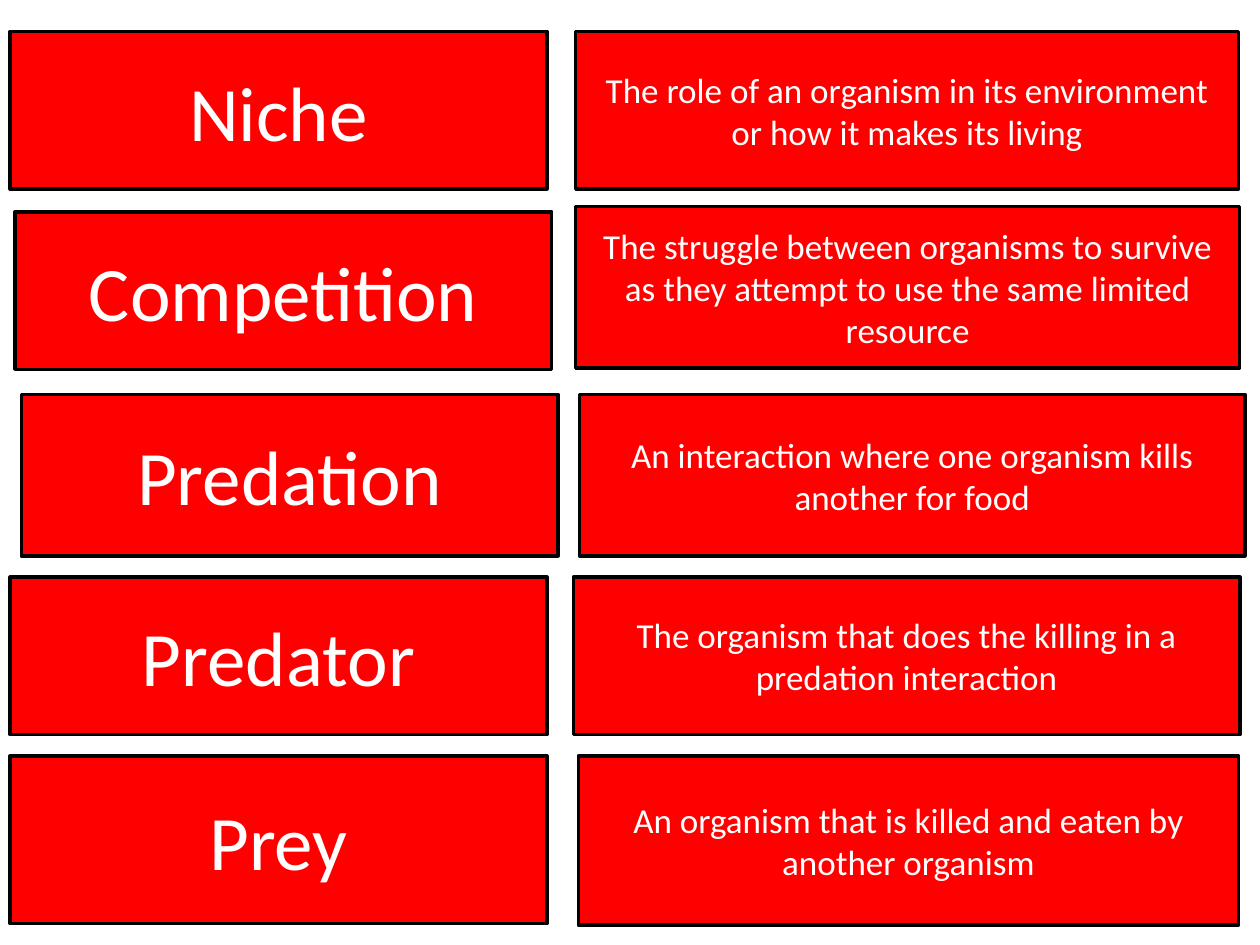
"""Build a slide of ecology terms paired with their definitions."""
from pptx import Presentation
from pptx.dml.color import RGBColor
from pptx.enum.shapes import MSO_SHAPE as Shape
from pptx.enum.text import MSO_ANCHOR as Anchor, PP_ALIGN as Align
from pptx.util import Pt

COLORS = {"card": "FF0000", "border": "000000", "text": "FFFFFF"}
FONT = "Calibri"
TERM_SIZE, DEFINITION_SIZE = 44, 20
TERM_WIDTH = 306.7

# Each box is (left, top, width, height); all terms share one width.
CARDS = [
    ("Niche", (5.8, 18, TERM_WIDTH, 90),
     "The role of an organism in its environment or how it makes its living",
     (329, 18, 378.7, 90)),
    ("Competition", (8.6, 121, TERM_WIDTH, 90),
     "The struggle between organisms to survive as they attempt to use the same limited resource",
     (329, 118.1, 379.4, 92.2)),
    ("Predation", (12.2, 225.4, TERM_WIDTH, 92.2),
     "An interaction where one organism kills another for food",
     (331.2, 225.4, 380.2, 92.2)),
    ("Predator", (5.8, 329.8, TERM_WIDTH, 90),
     "The organism that does the killing in a predation interaction",
     (327.6, 329.8, 380.9, 90)),
    ("Prey", (5.8, 432, TERM_WIDTH, 95.8),
     "An organism that is killed and eaten by another organism",
     (330.5, 432, 377.3, 96.5)),
]


def color(name):
    """Return the named colour."""
    return RGBColor.from_string(COLORS[name])


def add_card(slide, text, box, size):
    """Add a bordered box with centred text."""
    shape = slide.shapes.add_shape(Shape.FLOWCHART_PROCESS, *map(Pt, box))
    shape.shadow.inherit = False
    shape.fill.solid()
    shape.fill.fore_color.rgb = color("card")
    shape.line.color.rgb = color("border")
    shape.line.width = Pt(2)
    text_frame = shape.text_frame
    text_frame.text = text
    text_frame.word_wrap = True
    text_frame.vertical_anchor = Anchor.MIDDLE
    paragraph = text_frame.paragraphs[0]
    paragraph.alignment = Align.CENTER
    font = paragraph.runs[0].font
    font.name = FONT
    font.size = Pt(size)
    font.color.rgb = color("text")


def main():
    """Create the slide and save it."""
    presentation = Presentation()
    presentation.slide_width, presentation.slide_height = Pt(720), Pt(540)
    slide = presentation.slides.add_slide(presentation.slide_layouts[6])
    for term, term_box, definition, definition_box in CARDS:
        add_card(slide, term, term_box, TERM_SIZE)
        add_card(slide, definition, definition_box, DEFINITION_SIZE)
    presentation.save("out.pptx")


if __name__ == "__main__":
    main()
